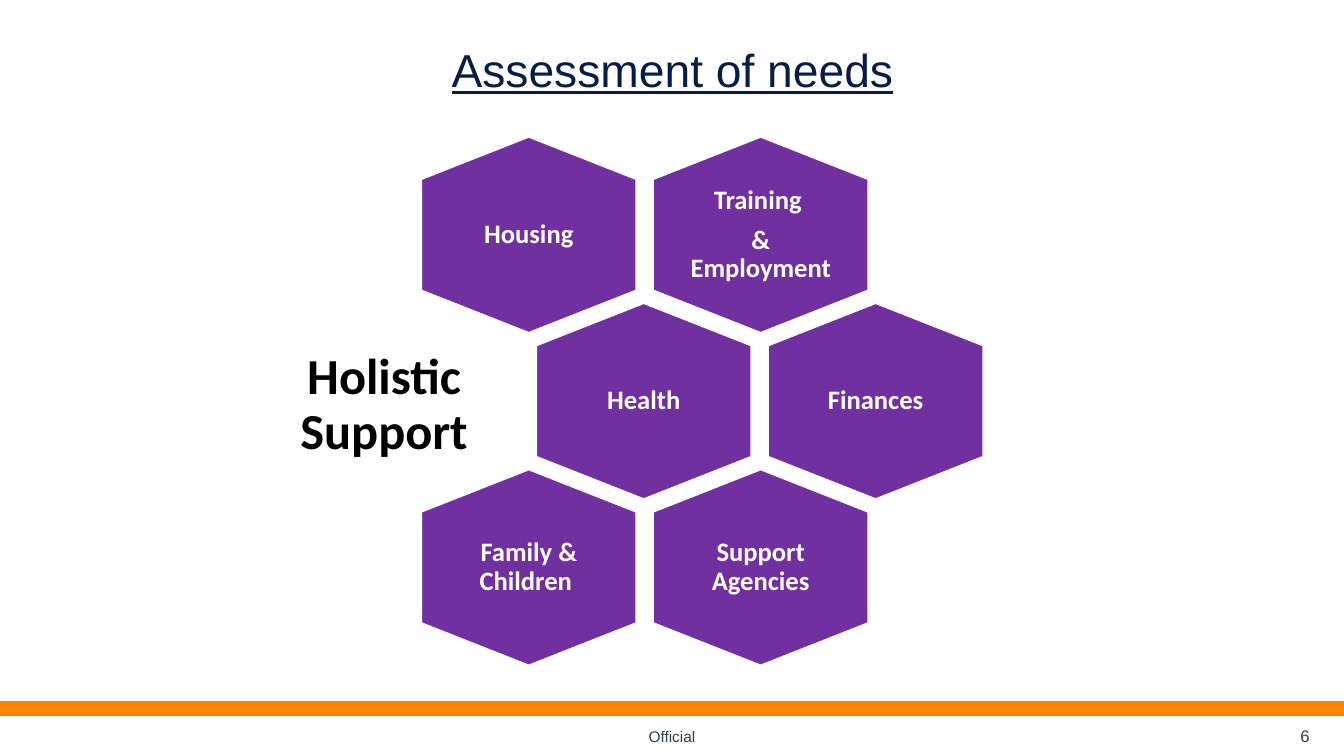
from lxml import etree
from pptx import Presentation
from pptx.dml.color import RGBColor
from pptx.enum.shapes import MSO_CONNECTOR as Conn
from pptx.enum.text import MSO_ANCHOR as Anchor, PP_ALIGN as Align
from pptx.oxml.ns import qn
from pptx.util import Inches, Pt

COLORS = {
    "navy": "071D49", "slate": "333F47", "orange": "FF8200",
    "purple": "7030A0", "white": "FFFFFF", "black": "000000",
}
TITLE = "Assessment of needs"
CENTRE = "Holistic Support"
FOOTER = "Official"
NUMBER = "6"

# Cell inset (left/right, top/bottom)
WIDE = (0.27, 0.31)
TIGHT = (0.34, 0.38)
# Each row: left edge, then its cells as (paragraphs, inset)
ROWS = [
    (4.18, [(["Housing"], WIDE), (["Training ", "& Employment"], TIGHT)]),
    (5.32, [(["Health"], TIGHT), (["Finances"], WIDE)]),
    (4.18, [(["Family & Children "], WIDE), (["Support Agencies"], TIGHT)]),
]
TOP, COL_STEP, ROW_STEP = 1.36, 2.3, 1.65
HEX_W, HEX_H, SLOPE = 2.13, 1.94, 0.42


def color(name):
    return RGBColor.from_string(COLORS[name])


def write(shape, lines, size, hue, face="Arial", bold=False, under=False,
          align=Align.CENTER, anchor=Anchor.TOP, inset=(0, 0),
          spacing=None, after=0):
    frame = shape.text_frame
    frame.word_wrap = True
    frame.vertical_anchor = anchor
    frame.margin_left = frame.margin_right = Inches(inset[0])
    frame.margin_top = frame.margin_bottom = Inches(inset[1])
    for i, line in enumerate(lines):
        para = frame.add_paragraph() if i else frame.paragraphs[0]
        para.alignment = align
        para.space_before = Pt(0)
        para.space_after = Pt(after)
        if spacing:
            para.line_spacing = spacing
        run = para.add_run()
        run.text = line
        font = run.font
        font.name, font.size = face, Pt(size)
        font.bold, font.underline = bold, under
        font.color.rgb = color(hue)


def add_text(slide, box, line, size, hue, **style):
    shape = slide.shapes.add_textbox(*map(Inches, box))
    write(shape, [line], size, hue, **style)


def add_hex(slide, x, y, lines, inset):
    """Draw a hexagon with its points at top and bottom."""
    mid, right = x + HEX_W / 2, x + HEX_W
    high, low, end = y + SLOPE, y + HEX_H - SLOPE, y + HEX_H
    points = [(right, high), (right, low), (mid, end), (x, low), (x, high)]
    outline = slide.shapes.build_freeform(Inches(mid), Inches(y))
    outline.add_line_segments([(Inches(a), Inches(b)) for a, b in points])
    cell = outline.convert_to_shape()
    cell.shadow.inherit = False
    cell.fill.solid()
    cell.fill.fore_color.rgb = color("purple")
    cell.line.color.rgb = color("white")
    cell.line.width = Pt(1)
    write(cell, lines, 19, "white", face="Calibri", bold=True,
          anchor=Anchor.MIDDLE, inset=inset, spacing=0.9, after=8)


def add_rule(slide, y, width):
    rule = slide.shapes.add_connector(
        Conn.STRAIGHT, 0, Inches(y), Inches(width), Inches(y))
    rule.line.color.rgb = color("orange")
    rule.line.width = Pt(11)
    etree.SubElement(rule._element.spPr, qn("a:effectLst"))


def main():
    deck = Presentation()
    deck.slide_width, deck.slide_height = Inches(13.33), Inches(7.5)
    slide = deck.slides.add_slide(deck.slide_layouts[6])

    add_text(slide, (0.39, 0.47, 12.56, 0.43), TITLE, 33, "navy",
             under=True, spacing=0.9)
    add_rule(slide, 7.03, 13.33)
    add_text(slide, (1.94, 7.21, 9.45, 0.19), FOOTER, 11, "slate",
             anchor=Anchor.BOTTOM)
    add_text(slide, (11.81, 7.2, 1.18, 0.2), NUMBER, 12, "slate",
             align=Align.RIGHT, anchor=Anchor.BOTTOM)

    for r, (left, cells) in enumerate(ROWS):
        for c, (lines, inset) in enumerate(cells):
            add_hex(slide, left + c * COL_STEP, TOP + r * ROW_STEP,
                    lines, inset)
    add_text(slide, (2.49, 3.44, 2.64, 1.17), CENTRE, 36, "black",
             face="Calibri", bold=True, anchor=Anchor.MIDDLE,
             inset=(0.15, 0.15), spacing=0.9, after=15)

    deck.save("out.pptx")


if __name__ == "__main__":
    main()
